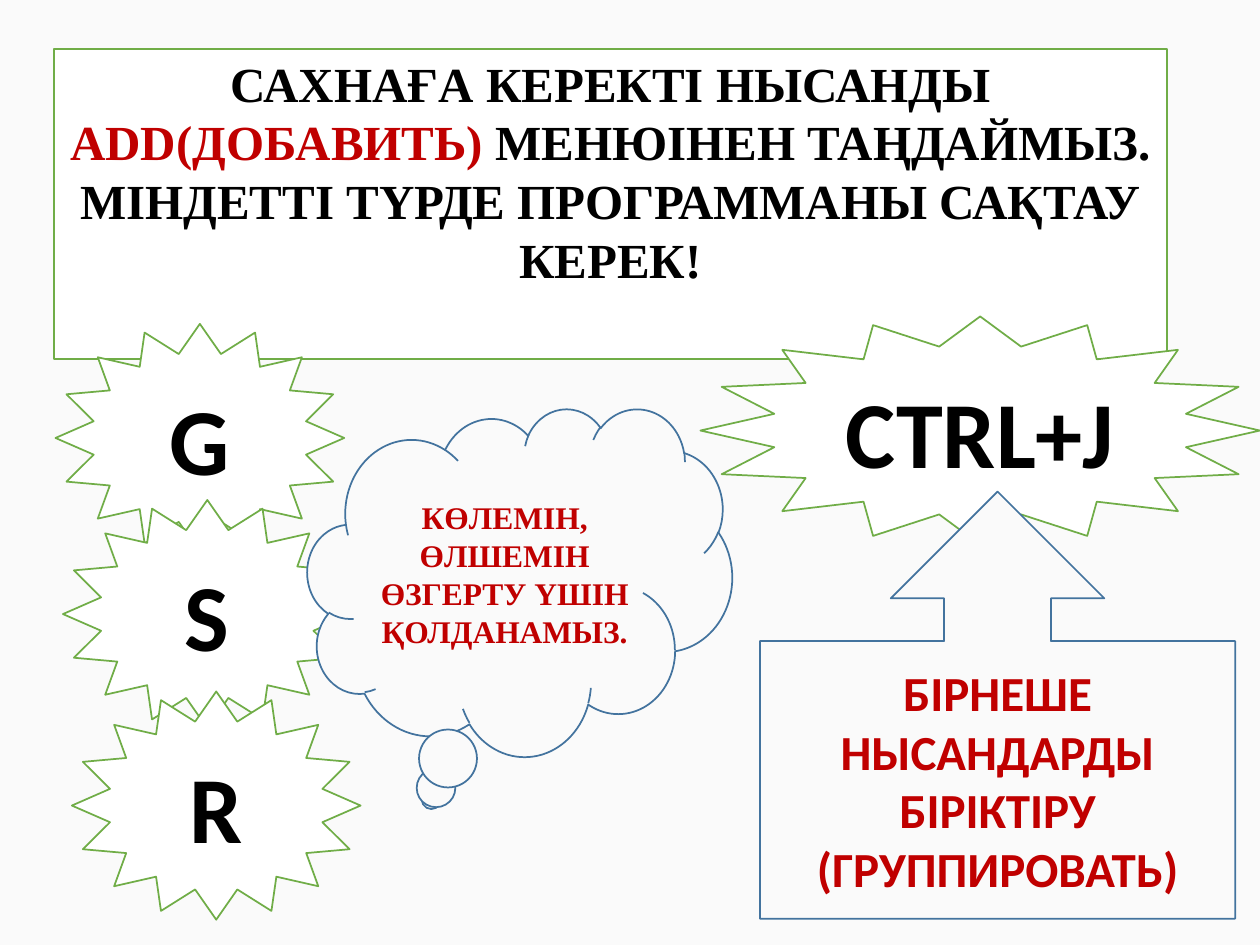
from pptx import Presentation
from pptx.dml.color import RGBColor
from pptx.enum.shapes import MSO_SHAPE
from pptx.enum.text import MSO_ANCHOR, PP_ALIGN
from pptx.util import Cm, Pt

RECT, STAR = MSO_SHAPE.RECTANGLE, MSO_SHAPE.STAR_16_POINT
CLOUD, UP_CALLOUT = MSO_SHAPE.CLOUD_CALLOUT, MSO_SHAPE.UP_ARROW_CALLOUT
CENTER, MIDDLE = PP_ALIGN.CENTER, MSO_ANCHOR.MIDDLE

WHITE, PAPER, BLACK = "FFFFFF", "FAFAFA", "000000"
RED, GREEN, BLUE = "C00000", "70AD47", "43739E"
SERIF, SANS = "Times New Roman", "Calibri"


def rgb(value):
    return RGBColor.from_string(value)


def add_box(slide, kind, box, fill, line, paragraphs, font, size):
    """Add a shape; each paragraph is a list of (text, colour) runs."""
    s = slide.shapes.add_shape(kind, *(Cm(v) for v in box))
    s.shadow.inherit = False
    s.fill.solid()
    s.fill.fore_color.rgb = rgb(fill)
    s.line.color.rgb = rgb(line)
    s.line.width = Pt(1)
    tf = s.text_frame
    tf.word_wrap = True
    tf.vertical_anchor = MIDDLE
    for i, runs in enumerate(paragraphs):
        p = tf.paragraphs[0] if i == 0 else tf.add_paragraph()
        p.alignment = CENTER
        for text, colour in runs:
            r = p.add_run()
            r.text = text
            r.font.name = font
            r.font.size = Pt(size)
            r.font.bold = True
            r.font.color.rgb = rgb(colour)
    return s


def add_title(slide, box):
    s = add_box(slide, RECT, box, WHITE, GREEN, [
        [("САХНАҒА КЕРЕКТІ НЫСАНДЫ ", BLACK), ("ADD(ДОБАВИТЬ) ", RED),
         ("МЕНЮІНЕН ТАҢДАЙМЫЗ.", BLACK)],
        [("МІНДЕТТІ ТҮРДЕ ПРОГРАММАНЫ САҚТАУ КЕРЕК!", BLACK)],
    ], SERIF, 28)
    s.text_frame.margin_bottom = Cm(1.47)  # keeps the text in the upper part


def add_key(slide, box, key):
    add_box(slide, STAR, box, WHITE, GREEN, [[(key, BLACK)]], SANS, 54)


def add_note(slide, kind, box, lines, font, size):
    add_box(slide, kind, box, PAPER, BLUE,
            [[(line, RED)] for line in lines], font, size)


def main():
    prs = Presentation()
    prs.slide_width, prs.slide_height = Cm(25.4), Cm(19.05)
    slide = prs.slides.add_slide(prs.slide_layouts[6])
    slide.background.fill.solid()
    slide.background.fill.fore_color.rgb = rgb(PAPER)

    add_title(slide, (1.09, 0.99, 22.43, 6.25))

    # Transform keys and what they do
    for key, left, top in (("G", 1.12, 6.53), ("S", 1.27, 10.08),
                           ("R", 1.45, 13.94)):
        add_key(slide, (left, top, 5.82, 4.6), key)
    add_note(slide, CLOUD, (6.2, 8.23, 8.56, 7.01),
             ["КӨЛЕМІН, ӨЛШЕМІН ӨЗГЕРТУ ҮШІН ҚОЛДАНАМЫЗ."], SERIF, 18)

    # Grouping shortcut and what it does
    add_key(slide, (14.12, 6.38, 11.28, 4.6), "CTRL+J")
    add_note(slide, UP_CALLOUT, (15.32, 9.91, 9.58, 8.61),
             ["БІРНЕШЕ НЫСАНДАРДЫ БІРІКТІРУ", "(ГРУППИРОВАТЬ)"], SANS, 28)

    prs.save("out.pptx")


if __name__ == "__main__":
    main()
